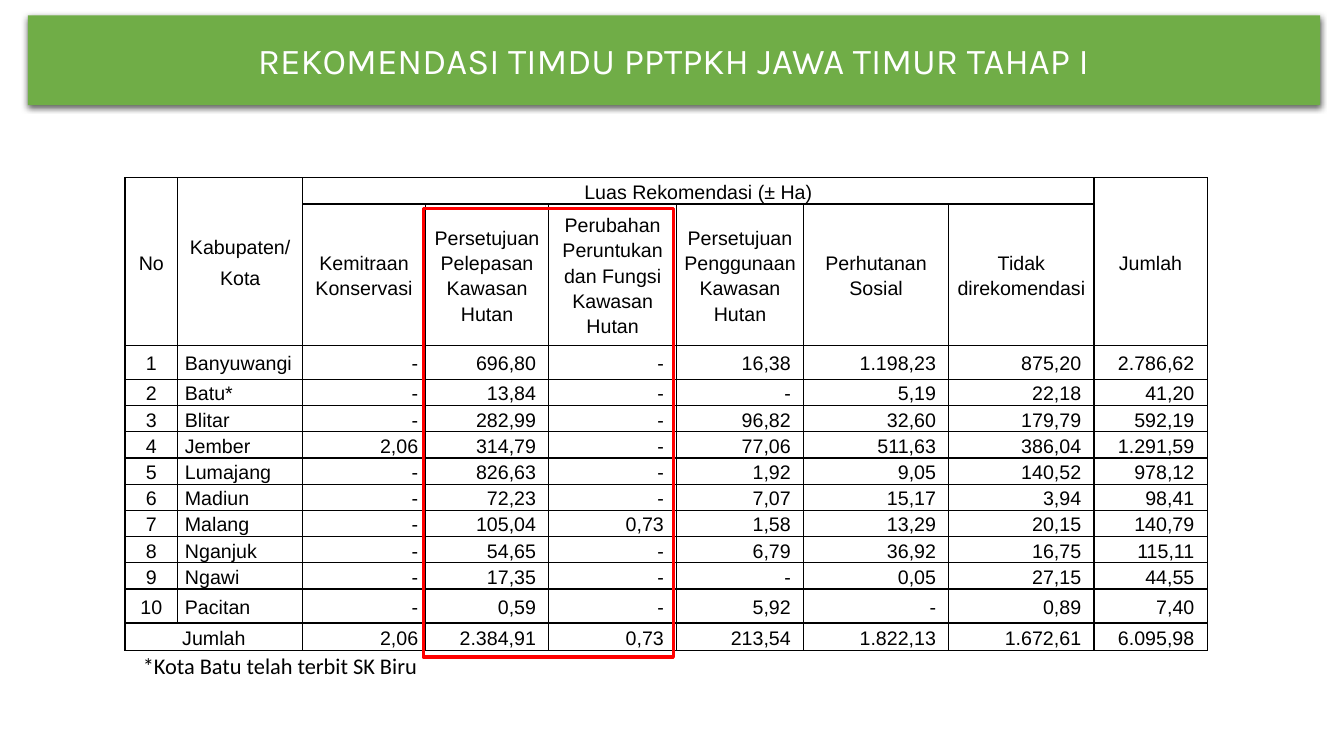
from lxml import etree
from pptx import Presentation
from pptx.dml.color import RGBColor
from pptx.enum.shapes import MSO_SHAPE as Shape
from pptx.enum.text import MSO_ANCHOR as Anchor, MSO_AUTO_SIZE as AutoSize, PP_ALIGN as Align
from pptx.oxml import parse_xml
from pptx.oxml.ns import nsdecls, qn
from pptx.util import Cm, Pt


def color(code):
    return RGBColor.from_string(code)


def write(paragraph, text, font, size, code, align):
    run = paragraph.add_run()
    run.text = text
    run.font.name = font
    run.font.size = Pt(size)
    run.font.color.rgb = color(code)
    paragraph.alignment = align


prs = Presentation()
prs.slide_width, prs.slide_height = Cm(33.87), Cm(19.05)
slide = prs.slides.add_slide(prs.slide_layouts[0])

# Title banner with a soft shadow
banner, note = slide.placeholders
banner.left, banner.top, banner.width, banner.height = Cm(0.7), Cm(0.39), Cm(32.57), Cm(2.26)
banner.fill.solid()
banner.fill.fore_color.rgb = color("70AD47")
banner.text_frame.auto_size = AutoSize.NONE
banner.text_frame.vertical_anchor = Anchor.MIDDLE
write(banner.text_frame.paragraphs[0], "REKOMENDASI TIMDU PPTPKH JAWA TIMUR TAHAP I",
      "Karla", 26, "FFFFFF", Align.CENTER)
banner.element.spPr.append(parse_xml(
    f'<a:effectLst {nsdecls("a")}><a:outerShdw blurRad="57150" dist="19050" dir="5400000" '
    'algn="ctr" rotWithShape="0"><a:srgbClr val="000000"><a:alpha val="63000"/></a:srgbClr>'
    '</a:outerShdw></a:effectLst>'))

# Table content: two header rows, ten districts, one total
headings = [
    ["No", "Kabupaten/\nKota", "Luas Rekomendasi (± Ha)", "", "", "", "", "", "Jumlah"],
    ["", "", "Kemitraan Konservasi", "Persetujuan Pelepasan Kawasan Hutan",
     "Perubahan Peruntukan dan Fungsi Kawasan Hutan", "Persetujuan Penggunaan Kawasan Hutan",
     "Perhutanan Sosial", "Tidak direkomendasi", ""],
]
districts = [
    ["Banyuwangi", "-", "696,80", "-", "16,38", "1.198,23", "875,20", "2.786,62"],
    ["Batu*", "-", "13,84", "-", "-", "5,19", "22,18", "41,20"],
    ["Blitar", "-", "282,99", "-", "96,82", "32,60", "179,79", "592,19"],
    ["Jember", "2,06", "314,79", "-", "77,06", "511,63", "386,04", "1.291,59"],
    ["Lumajang", "-", "826,63", "-", "1,92", "9,05", "140,52", "978,12"],
    ["Madiun", "-", "72,23", "-", "7,07", "15,17", "3,94", "98,41"],
    ["Malang", "-", "105,04", "0,73", "1,58", "13,29", "20,15", "140,79"],
    ["Nganjuk", "-", "54,65", "-", "6,79", "36,92", "16,75", "115,11"],
    ["Ngawi", "-", "17,35", "-", "-", "0,05", "27,15", "44,55"],
    ["Pacitan", "-", "0,59", "-", "5,92", "-", "0,89", "7,40"],
]
total = ["Jumlah", "", "2,06", "2.384,91", "0,73", "213,54", "1.822,13", "1.672,61", "6.095,98"]
numbered = [[str(number)] + district for number, district in enumerate(districts, 1)]
rows = headings + numbered + [total]
widths = [1.33, 3.15, 3.09, 3.11, 3.22, 3.2, 3.66, 3.66, 2.85]
heights = [0.66, 3.57, 0.85] + [0.66] * 8 + [0.86, 0.69]

# Table grid
areas = slide.shapes.add_table(len(rows), len(widths), Cm(3.15), Cm(4.48),
                               Cm(sum(widths)), Cm(sum(heights))).table
areas.first_row = areas.horz_banding = False
for column, width in zip(areas.columns, widths):
    column.width = Cm(width)
for row, height in zip(areas.rows, heights):
    row.height = Cm(height)
for top, left, bottom, right in [(0, 0, 1, 0), (0, 1, 1, 1), (0, 2, 0, 7), (0, 8, 1, 8),
                                 (12, 0, 12, 1)]:
    areas.cell(top, left).merge(areas.cell(bottom, right))

# Table cells
for r, values in enumerate(rows):
    for c, value in enumerate(values):
        cell = areas.cell(r, c)
        cell.vertical_anchor = Anchor.MIDDLE
        cell.margin_top = cell.margin_bottom = 0
        cell.margin_left = cell.margin_right = Cm(0.18)
        if r < 2 or c == 0:
            align = Align.CENTER
        elif c == 1:
            align = Align.LEFT
        else:
            align = Align.RIGHT
            if c > 2:
                cell.margin_right = Cm(0.32)
        for side in ("lnL", "lnR", "lnT", "lnB"):
            border = etree.SubElement(cell._tc.get_or_add_tcPr(), qn(f"a:{side}"), w="12700")
            ink = etree.SubElement(border, qn("a:solidFill"))
            etree.SubElement(ink, qn("a:srgbClr"), val="000000")
        cell.fill.background()
        if not value:
            continue
        for i, line in enumerate(value.split("\n")):
            paragraph = cell.text_frame.add_paragraph() if i else cell.text_frame.paragraphs[0]
            paragraph.line_spacing = 1.15
            paragraph.space_before = Pt(2 if i else 0)
            paragraph.space_after = Pt(2)
            write(paragraph, line, "Arial", 14, "000000", align)

# Red frame around the two forest-release columns
highlight = slide.shapes.add_shape(Shape.RECTANGLE, Cm(10.67), Cm(5.26), Cm(6.3), Cm(11.3))
highlight.shadow.inherit = False
highlight.fill.background()
highlight.line.color.rgb = color("FF0000")
highlight.line.width = Pt(2.5)

# Footnote
note.left, note.top, note.width, note.height = Cm(3.15), Cm(16.41), Cm(9.02), Cm(1.22)
frame = note.text_frame
frame.auto_size = AutoSize.NONE
frame.vertical_anchor = Anchor.TOP
frame.margin_left = frame.margin_right = Cm(0.18)
frame.margin_top = frame.margin_bottom = Cm(0.1)
remark = frame.paragraphs[0]
remark.line_spacing = 0.9
remark.space_before = Pt(0)
properties = remark._p.get_or_add_pPr()
properties.set("marL", str(Cm(1.27)))
properties.set("indent", str(-Cm(1)))
write(remark, "*Kota Batu telah terbit SK Biru", "Calibri", 16, "000000", Align.LEFT)

prs.save("out.pptx")
